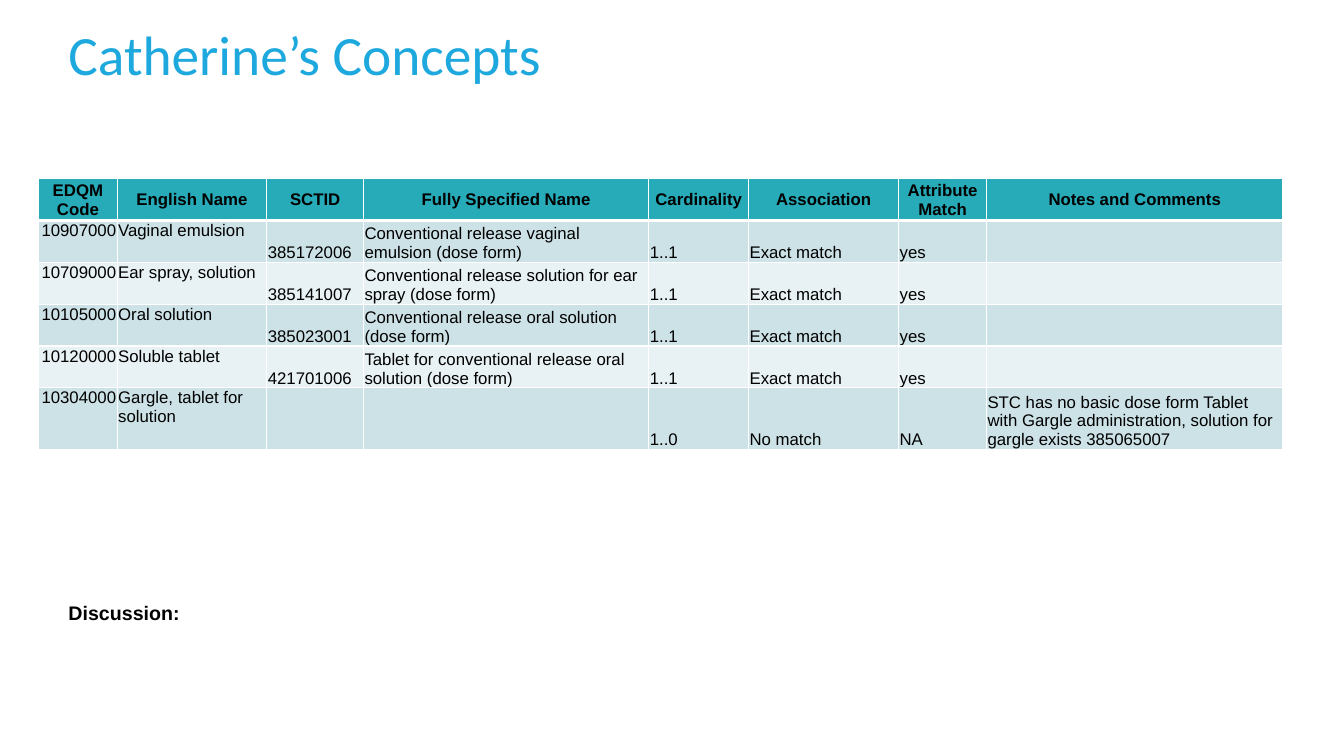
from dataclasses import dataclass

from lxml.etree import SubElement
from pptx import Presentation
from pptx.dml.color import RGBColor
from pptx.enum.text import MSO_ANCHOR as Anchor, PP_ALIGN as Align
from pptx.oxml.ns import qn
from pptx.util import Pt


@dataclass(frozen=True)
class Theme:
    title: str = "1DA8DE"
    ink: str = "000000"
    header: str = "27ABB8"
    bands: tuple = ("CDE2E6", "E8F1F3")
    rule: str = "FFFFFF"
    title_font: str = "Calibri"
    body_font: str = "Arial"
    title_size: float = 39.6
    discussion_size: float = 14
    table_size: float = 12


THEME = Theme()

# Mapping table content
HEADINGS = ["EDQM Code", "English Name", "SCTID", "Fully Specified Name",
            "Cardinality", "Association", "Attribute Match", "Notes and Comments"]
EXACT = ("1..1", "Exact match", "yes", "")
CONCEPTS = [
    ("10907000", "Vaginal emulsion", "385172006",
     "Conventional release vaginal emulsion (dose form)", *EXACT),
    ("10709000", "Ear spray, solution", "385141007",
     "Conventional release solution for ear spray (dose form)", *EXACT),
    ("10105000", "Oral solution", "385023001",
     "Conventional release oral solution (dose form)", *EXACT),
    ("10120000", "Soluble tablet", "421701006",
     "Tablet for conventional release oral solution (dose form)", *EXACT),
    ("10304000", "Gargle, tablet for solution", "", "", "1..0", "No match", "NA",
     "STC has no basic dose form Tablet with Gargle administration, "
     "solution for gargle exists 385065007"),
]
COLUMN_WIDTHS = [56.1, 106.9, 69.1, 203.8, 71.3, 107.2, 62.8, 211.8]
ROW_HEIGHTS = [29.9] * 5 + [41]

# Cell formats
CELL_MARGINS = {"margin_left": Pt(0.7), "margin_top": Pt(0.7),
                "margin_right": Pt(0.7), "margin_bottom": 0}
HEADING_FORMAT = {"align": Align.CENTER, "anchor": Anchor.MIDDLE}
CODE_FORMAT = {"align": Align.RIGHT, "anchor": Anchor.TOP}
NAME_FORMAT = {"align": Align.LEFT, "anchor": Anchor.TOP}
MATCH_FORMAT = {"align": Align.LEFT, "anchor": Anchor.BOTTOM}
COLUMN_FORMATS = [CODE_FORMAT, NAME_FORMAT] + [MATCH_FORMAT] * 6


def apply(target, values):
    for attribute, value in values.items():
        setattr(target, attribute, value)


def style_font(font, name, size, color, bold=False):
    apply(font, {"name": name, "size": Pt(size), "bold": bold})
    font.color.rgb = RGBColor.from_string(color)


def add_text(slide, words, box, font, frame_format, line_spacing=1.0):
    frame = slide.shapes.add_textbox(*map(Pt, box)).text_frame
    apply(frame, {"word_wrap": True, **frame_format})
    paragraph = frame.paragraphs[0]
    paragraph.text = words
    paragraph.line_spacing = line_spacing
    style_font(paragraph.font, **font)


def add_borders(cell, bottom_width):
    properties = cell._tc.get_or_add_tcPr()
    for side, width in {"L": 1, "R": 1, "T": 1, "B": bottom_width}.items():
        line = SubElement(properties, qn(f"a:ln{side}"), w=str(Pt(width)))
        fill = SubElement(line, qn("a:solidFill"))
        SubElement(fill, qn("a:srgbClr"), val=THEME.rule)


def fill_cell(cell, words, align, anchor, color, bold=False, bottom_width=1):
    add_borders(cell, bottom_width)
    apply(cell, {**CELL_MARGINS, "vertical_anchor": anchor})
    cell.fill.solid()
    cell.fill.fore_color.rgb = RGBColor.from_string(color)
    paragraph = cell.text_frame.paragraphs[0]
    paragraph.alignment = align
    if words:
        paragraph.text = words
    style_font(paragraph.font, THEME.body_font, THEME.table_size, THEME.ink, bold)


def add_mapping_table(slide, left, top):
    table = slide.shapes.add_table(
        len(ROW_HEIGHTS), len(COLUMN_WIDTHS), Pt(left), Pt(top),
        Pt(sum(COLUMN_WIDTHS)), Pt(sum(ROW_HEIGHTS))).table
    for column, width in zip(table.columns, COLUMN_WIDTHS):
        column.width = Pt(width)
    for row, height in zip(table.rows, ROW_HEIGHTS):
        row.height = Pt(height)

    # Header row
    for cell, heading in zip(table.rows[0].cells, HEADINGS):
        fill_cell(cell, heading, **HEADING_FORMAT, color=THEME.header,
                  bold=True, bottom_width=3)

    # Banded concept rows
    for index, concept in enumerate(CONCEPTS):
        cells = table.rows[index + 1].cells
        for cell, words, cell_format in zip(cells, concept, COLUMN_FORMATS):
            fill_cell(cell, words, **cell_format, color=THEME.bands[index % 2])


def main():
    deck = Presentation()
    apply(deck, {"slide_width": Pt(960), "slide_height": Pt(540)})
    slide = deck.slides.add_slide(deck.slide_layouts[6])

    # Title
    add_text(slide, "Catherine’s Concepts", (41.8, 16.6, 828, 49),
             {"name": THEME.title_font, "size": THEME.title_size,
              "color": THEME.title},
             {"vertical_anchor": Anchor.MIDDLE}, line_spacing=0.9)

    # Concept mappings
    add_mapping_table(slide, 27.6, 127.6)

    # Discussion
    add_text(slide, "Discussion:", (41.8, 425.5, 860.4, 41),
             {"name": THEME.body_font, "size": THEME.discussion_size,
              "color": THEME.ink, "bold": True},
             {"vertical_anchor": Anchor.TOP})

    deck.save("out.pptx")


if __name__ == "__main__":
    main()
